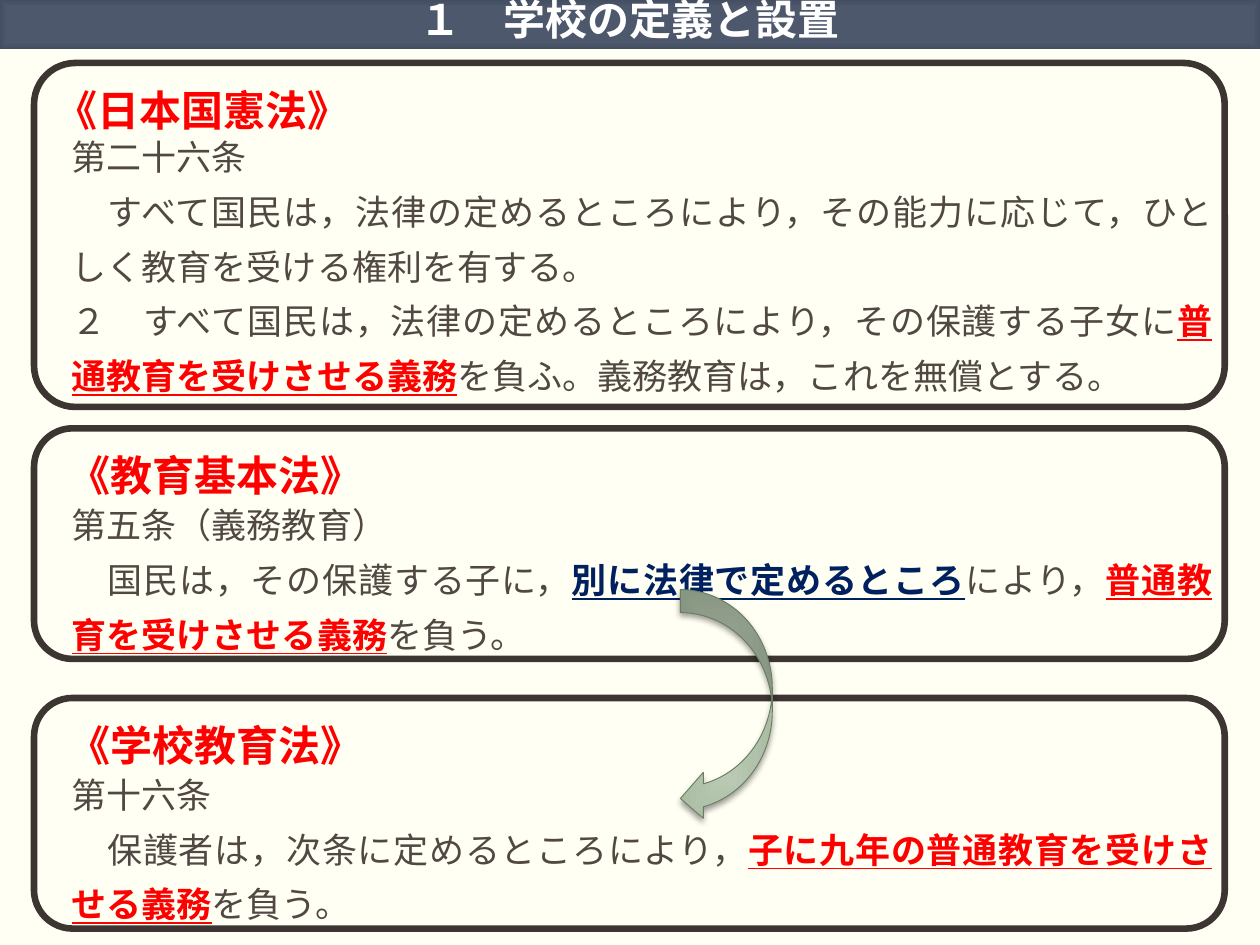
from pptx import Presentation, util as u
from pptx.dml.color import RGBColor
from pptx.enum import shapes, text
from pptx.oxml import parse_xml
from pptx.oxml.ns import qn

COLS, ROWS = 100, 75
CELL = u.Inches(0.1)
NS = 'xmlns:a="http://schemas.openxmlformats.org/drawingml/2006/main"'
LATIN, CJK = "Arial", "Noto Sans CJK JP"
CREAM = RGBColor(0xFF, 0xFF, 0xF3)
WHITE = RGBColor(0xFF, 0xFF, 0xFF)
FRAME = RGBColor(0x3C, 0x35, 0x32)
BODY = RGBColor(0x51, 0x48, 0x43)
RED = RGBColor(0xFF, 0x00, 0x00)
NAVY = RGBColor(0x00, 0x20, 0x60)
OLIVE = RGBColor(0x6A, 0x7B, 0x63)
BAR_STOPS = [(0, RGBColor(0x4E, 0x59, 0x6E)), (71, RGBColor(0x4D, 0x58, 0x6D)),
             (100, RGBColor(0x44, 0x4E, 0x61))]
ARROW_STOPS = [(0, RGBColor(0xBA, 0xC9, 0xB4)), (100, RGBColor(0xAA, 0xBD, 0xA3))]

CONSTITUTION = [
    [("第二十六条", BODY)],
    [("　すべて国民は，法律の定めるところにより，その能力に応じて，"
      "ひとしく教育を受ける権利を有する。", BODY)],
    [("２　すべて国民は，法律の定めるところにより，その保護する子女に", BODY),
     ("普通教育を受けさせる義務", RED),
     ("を負ふ。義務教育は，これを無償とする。", BODY)],
]
BASIC_ACT = [
    [("第五条（義務教育）", BODY)],
    [("　国民は，その保護する子に，", BODY), ("別に法律で定めるところ", NAVY),
     ("により，", BODY), ("普通教育を受けさせる義務", RED), ("を負う。", BODY)],
]
SCHOOL_ACT = [
    [("第十六条", BODY)],
    [("　保護者は，次条に定めるところにより，", BODY),
     ("子に九年の普通教育を受けさせる義務", RED), ("を負う。", BODY)],
]


def grid(*box):
    """Turn columns and rows of the slide grid into lengths."""
    return [int(v * CELL) for v in box]


def add_run(p, words, size, color, font=LATIN, bold=False, underline=False):
    """Add one styled run with its East Asian font."""
    r = p.add_run()
    r.text = words
    r.font.size, r.font.name = u.Pt(size), font
    r.font.bold, r.font.underline = bold, underline
    r.font.color.rgb = color
    r._r.get_or_add_rPr().find(qn("a:latin")).addnext(
        parse_xml(f'<a:ea {NS} typeface="{CJK}"/>'))


def fill_from_centre(s, stops):
    """Fill a shape with a rectangular gradient around its centre."""
    s.fill.solid()
    marks = "".join(f'<a:gs pos="{pos * 1000}"><a:srgbClr val="{color}"/></a:gs>'
                    for pos, color in stops)
    solid = s._element.spPr.find(qn("a:solidFill"))
    solid.getparent().replace(solid, parse_xml(
        f'<a:gradFill {NS} rotWithShape="1"><a:gsLst>{marks}</a:gsLst><a:path path="rect">'
        '<a:fillToRect l="50000" t="50000" r="50000" b="50000"/></a:path></a:gradFill>'))


def add_text(parent, box, paragraphs):
    """Add a justified text box; each paragraph lists its runs' settings."""
    s = parent.add_textbox(*grid(*box))
    tf = s.text_frame
    tf.word_wrap = True
    tf.auto_size = text.MSO_AUTO_SIZE.SHAPE_TO_FIT_TEXT
    for i, runs in enumerate(paragraphs):
        p = tf.add_paragraph() if i else tf.paragraphs[0]
        p.alignment, p.line_spacing = text.PP_ALIGN.JUSTIFY, 1.3
        for run in runs:
            add_run(p, **run)


def add_title(sl, box, words):
    """Draw the title bar."""
    s = sl.shapes.add_shape(shapes.MSO_SHAPE.RECTANGLE, *grid(*box))
    s.shadow.inherit = False
    s.line.fill.background()
    fill_from_centre(s, BAR_STOPS)
    tf = s.text_frame
    tf.word_wrap = True
    tf.vertical_anchor = text.MSO_ANCHOR.BOTTOM
    tf.margin_left = tf.margin_right = 0
    tf.margin_top = tf.margin_bottom = u.Inches(0.04)
    p = tf.paragraphs[0]
    p.alignment, p.line_spacing = text.PP_ALIGN.CENTER, 0.9
    add_run(p, words, 24, WHITE, CJK, bold=True)


def add_law(sl, box, name, articles, body_top, indent=1, radius=0.1667):
    """Draw one framed law with its heading and articles."""
    left, top, width, height = box
    parent = sl.shapes.add_group_shape().shapes
    s = parent.add_shape(shapes.MSO_SHAPE.ROUNDED_RECTANGLE, *grid(*box))
    s.adjustments[0] = radius
    s.shadow.inherit = False
    s.fill.background()
    s.line.color.rgb, s.line.width = FRAME, u.Pt(3.78)
    heading = dict(words=f"\u00a0《{name}》", size=24, color=RED, bold=True)
    add_text(parent, (left + indent, top, 50.3, 6), [[heading]])
    body = [[dict(words=words, size=20, color=color, bold=color != BODY,
                  underline=color != BODY) for words, color in runs] for runs in articles]
    add_text(parent, (left + 2, top + body_top, width - 2, height - body_top), body)


def add_reference_arrow(sl, box):
    """Draw the curved arrow between two laws."""
    s = sl.shapes.add_shape(shapes.MSO_SHAPE.CURVED_LEFT_ARROW, *grid(*box))
    fill_from_centre(s, ARROW_STOPS)
    s.line.color.rgb, s.line.width = OLIVE, u.Pt(0.5)
    s.shadow.inherit = False
    s._element.spPr.find(qn("a:effectLst")).append(parse_xml(
        f'<a:outerShdw {NS} blurRad="{u.Pt(3.5)}" dist="{u.Pt(2)}" dir="5400000" '
        'rotWithShape="0"><a:srgbClr val="000000"><a:alpha val="38000"/></a:srgbClr>'
        '</a:outerShdw>'))


def main():
    """Build the slide and save it."""
    prs = Presentation()
    prs.slide_width, prs.slide_height = COLS * CELL, ROWS * CELL
    sl = prs.slides.add_slide(prs.slide_layouts[6])
    sl.background.fill.solid()
    sl.background.fill.fore_color.rgb = CREAM
    add_title(sl, (0, 0, COLS, 3.9), "１　学校の定義と設置")
    add_law(sl, (2.7, 5, 94.5, 27.3), "日本国憲法", CONSTITUTION, 4.3, 0, 0.12)
    add_law(sl, (2.7, 34, 94.5, 18.3), "教育基本法", BASIC_ACT, 4.5)
    add_law(sl, (2.7, 55.4, 94.5, 18.3), "学校教育法", SCHOOL_ACT, 4.5)
    add_reference_arrow(sl, (54, 46.8, 7.3, 18.4))
    prs.save("out.pptx")


if __name__ == "__main__":
    main()
